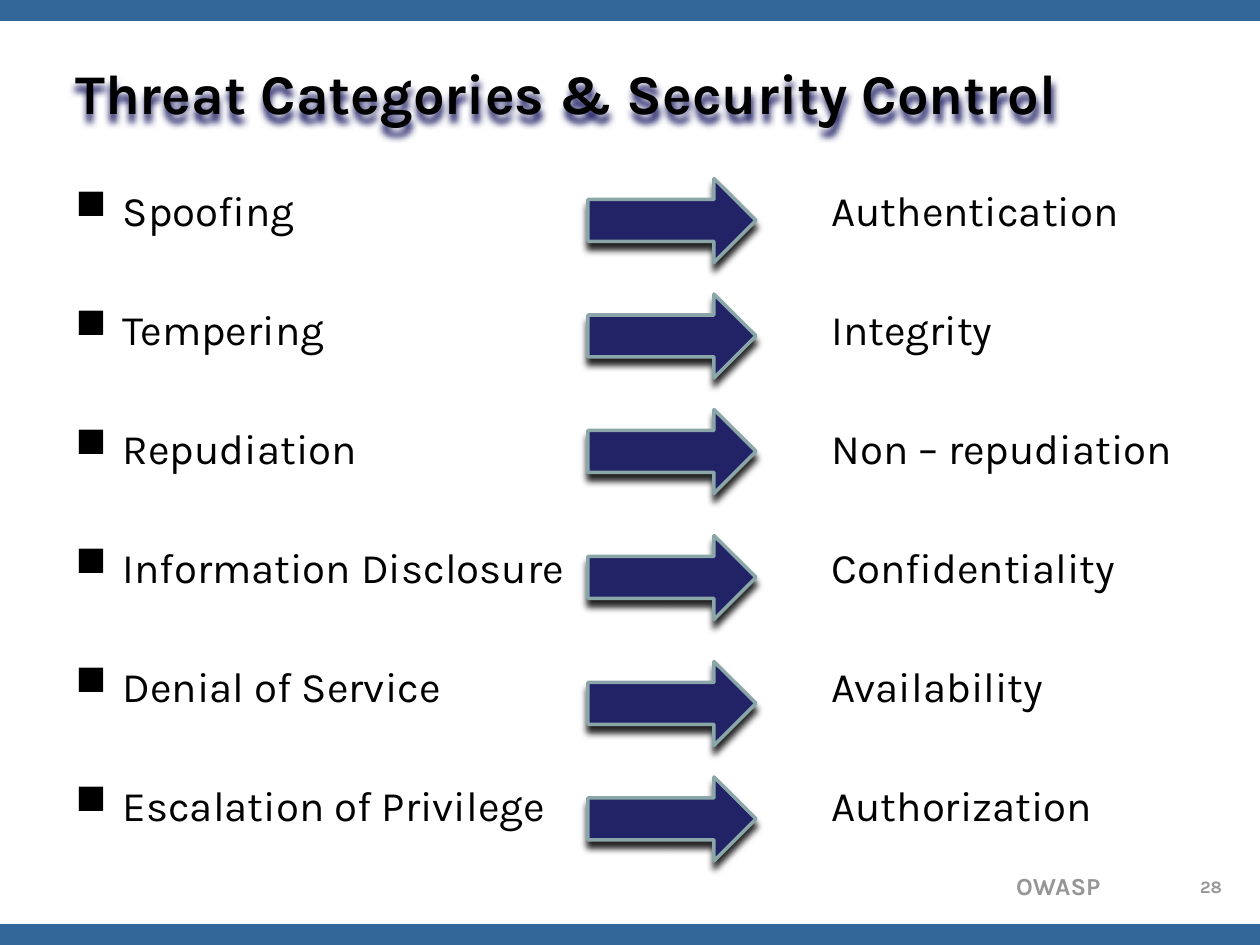
from dataclasses import dataclass

from lxml import etree
from pptx import Presentation
from pptx.dml.color import RGBColor
from pptx.enum.shapes import MSO_SHAPE
from pptx.enum.text import MSO_ANCHOR, PP_ALIGN
from pptx.oxml.ns import qn
from pptx.util import Pt

RECTANGLE, RIGHT_ARROW = MSO_SHAPE.RECTANGLE, MSO_SHAPE.RIGHT_ARROW
TOP, MIDDLE = MSO_ANCHOR.TOP, MSO_ANCHOR.MIDDLE
LEFT, CENTER, RIGHT = PP_ALIGN.LEFT, PP_ALIGN.CENTER, PP_ALIGN.RIGHT


@dataclass(frozen=True)
class Theme:
    font: str = "Karla"
    ink: str = "000000"
    band: str = "336699"
    muted: str = "969696"
    arrow: str = "222267"
    arrow_edge: str = "8AA6A8"
    arrow_shadow: str = "262626"
    title_shadow: str = "222267"
    title_size: float = 32
    body_size: float = 24
    footer_size: float = 14
    number_size: float = 10


class SlideBuilder:
    def __init__(self, slide, theme):
        self.slide = slide
        self.theme = theme

    def shape(self, kind, left, top, width, height, fill):
        shape = self.slide.shapes.add_shape(
            kind, Pt(left), Pt(top), Pt(width), Pt(height))
        shape.shadow.inherit = False
        shape.fill.solid()
        shape.fill.fore_color.rgb = RGBColor.from_string(fill)
        shape.line.fill.background()
        return shape

    def shadow(self, shape, color):
        shape.shadow.inherit = False
        effects = shape._element.spPr.find(qn("a:effectLst"))
        outer = etree.SubElement(
            effects, qn("a:outerShdw"), blurRad=str(Pt(4)), dist=str(Pt(4)),
            dir="5400000", algn="ctr", rotWithShape="0")
        etree.SubElement(outer, qn("a:srgbClr"), val=color)

    def arrow(self, left, top, width, height):
        arrow = self.shape(RIGHT_ARROW, left, top, width, height, self.theme.arrow)
        arrow.line.color.rgb = RGBColor.from_string(self.theme.arrow_edge)
        arrow.line.width = Pt(2)
        self.shadow(arrow, self.theme.arrow_shadow)

    def text_box(self, left, top, width, height, anchor=TOP):
        box = self.slide.shapes.add_textbox(
            Pt(left), Pt(top), Pt(width), Pt(height))
        box.text_frame.word_wrap = True
        box.text_frame.vertical_anchor = anchor
        return box

    def run(self, paragraph, text, size, color, bold=False):
        run = paragraph.add_run()
        run.text = text
        run.font.name = self.theme.font
        run.font.size = Pt(size)
        run.font.bold = bold
        run.font.color.rgb = RGBColor.from_string(color)

    def label(self, text, left, top, width, height, size, color,
              align=LEFT, anchor=TOP):
        box = self.text_box(left, top, width, height, anchor)
        paragraph = box.text_frame.paragraphs[0]
        paragraph.alignment = align
        self.run(paragraph, text, size, color, bold=True)
        return box

    def bullet(self, paragraph, indent, tab):
        properties = paragraph._p.get_or_add_pPr()
        properties.set("marL", str(Pt(indent)))
        properties.set("indent", str(Pt(-indent)))
        etree.SubElement(properties, qn("a:buChar"), char="■")
        tabs = etree.SubElement(properties, qn("a:tabLst"))
        etree.SubElement(tabs, qn("a:tab"), pos=str(Pt(tab)), algn="l")

    def paired_list(self, pairs, left, top, width, height, gap):
        frame = self.text_box(left, top, width, height).text_frame
        for index, (threat, control) in enumerate(pairs):
            paragraph = frame.add_paragraph() if index else frame.paragraphs[0]
            if index:
                paragraph.space_before = Pt(gap)
            self.bullet(paragraph, indent=27, tab=432)
            self.run(paragraph, f"{threat}\t{control}",
                     self.theme.body_size, self.theme.ink)


THREAT_CONTROLS = [
    ("Spoofing", "Authentication"),
    ("Tempering", "Integrity"),
    ("Repudiation", "Non – repudiation"),
    ("Information Disclosure", "Confidentiality"),
    ("Denial of Service", "Availability"),
    ("Escalation of Privilege", "Authorization"),
]
ARROW_TOPS = [102, 168, 234, 306, 378, 444]


def main():
    deck = Presentation()
    deck.slide_width, deck.slide_height = Pt(720), Pt(540)
    theme = Theme()
    builder = SlideBuilder(deck.slides.add_slide(deck.slide_layouts[6]), theme)

    # Bands along the top and bottom edges
    for band_top in (0, 528):
        builder.shape(RECTANGLE, 0, band_top, 720, 12, theme.band)

    # Footer
    builder.label("OWASP", 448, 494, 188, 24, theme.footer_size, theme.muted, RIGHT)
    builder.label("28", 676, 497, 32, 18, theme.number_size, theme.muted, CENTER)

    # Title
    title = builder.label("Threat Categories & Security Control", 36, 21.6, 648, 62.6,
                          theme.title_size, theme.ink, anchor=MIDDLE)
    builder.shadow(title, theme.title_shadow)

    # Threats and the controls that answer them
    builder.paired_list(THREAT_CONTROLS, 36, 102, 648, 380, gap=39.14)
    for arrow_top in ARROW_TOPS:
        builder.arrow(336, arrow_top, 96, 48)

    deck.save("out.pptx")


if __name__ == "__main__":
    main()
